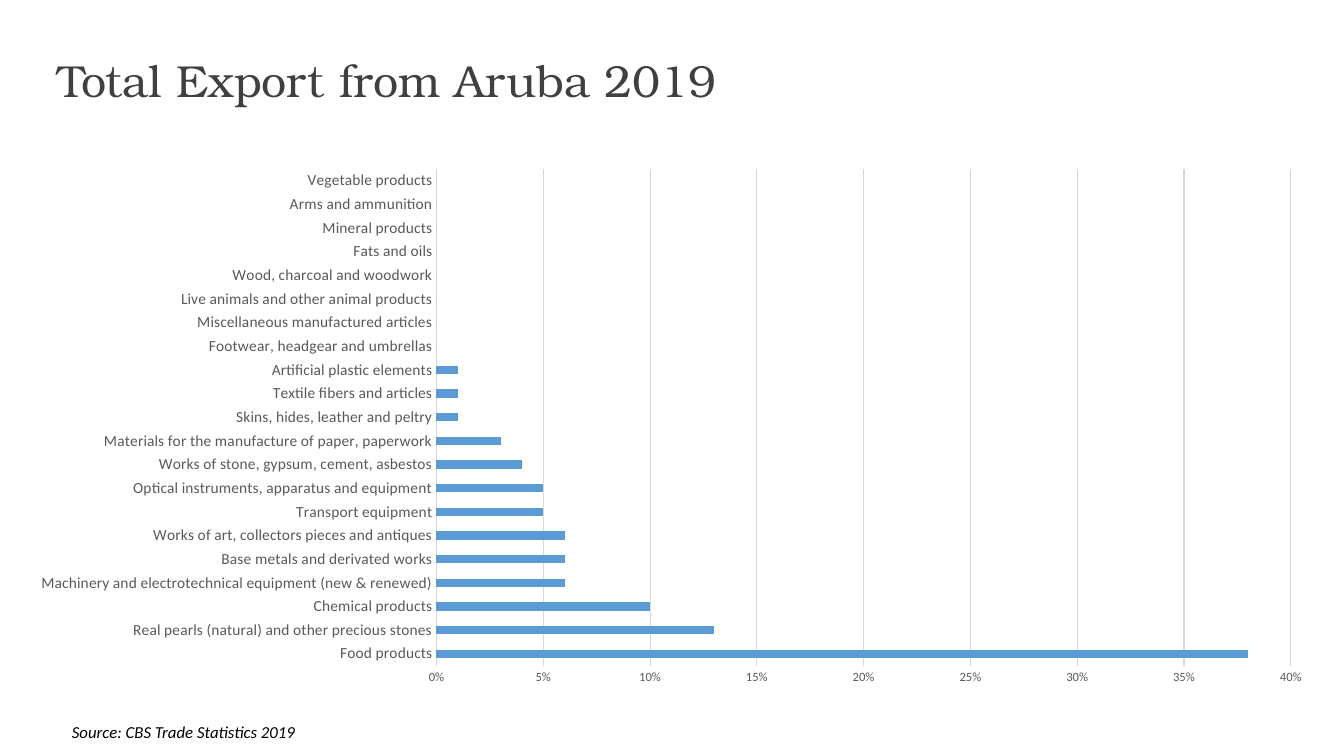
from pptx import Presentation
from pptx.chart.data import CategoryChartData as ChartData
from pptx.dml.color import RGBColor
from pptx.enum.chart import XL_CHART_TYPE as Chart, XL_TICK_MARK as Tick
from pptx.enum.text import MSO_ANCHOR as Anchor, MSO_AUTO_SIZE as Fit, PP_ALIGN as Align
from pptx.util import Pt

PX = 914400 / 100.8
BLACK = RGBColor(0x00, 0x00, 0x00)
DARK = RGBColor(0x40, 0x40, 0x40)
GRAY = RGBColor(0x59, 0x59, 0x59)
PALE = RGBColor(0xD9, 0xD9, 0xD9)
BLUE = RGBColor(0x5B, 0x9B, 0xD5)

EXPORTS = [
    ("Food products", 0.38),
    ("Real pearls (natural) and other precious stones", 0.13),
    ("Chemical products", 0.1),
    ("Machinery and electrotechnical equipment (new & renewed)", 0.06),
    ("Base metals and derivated works", 0.06),
    ("Works of art, collectors pieces and antiques", 0.06),
    ("Transport equipment", 0.05),
    ("Optical instruments, apparatus and equipment", 0.05),
    ("Works of stone, gypsum, cement, asbestos", 0.04),
    ("Materials for the manufacture of paper, paperwork", 0.03),
    ("Skins, hides, leather and peltry", 0.01),
    ("Textile fibers and articles", 0.01),
    ("Artificial plastic elements", 0.01),
    ("Footwear, headgear and umbrellas", 0),
    ("Miscellaneous manufactured articles", 0),
    ("Live animals and other animal products", 0),
    ("Wood, charcoal and woodwork", 0),
    ("Fats and oils", 0),
    ("Mineral products", 0),
    ("Arms and ammunition", 0),
    ("Vegetable products", 0),
]


def box(*sides):
    return [round(side * PX) for side in sides]


def style(font, name, size, color):
    font.name, font.size = name, Pt(size)
    font.color.rgb = color


deck = Presentation()
deck.slide_width, deck.slide_height = box(1344, 756)
slide = deck.slides.add_slide(deck.slide_layouts[5])

# Title
title = slide.shapes.title
title.left, title.top, title.width, title.height = box(47, 47, 836, 65)
frame = title.text_frame
frame.text = "Total Export from Aruba 2019"
frame.auto_size = Fit.NONE
frame.word_wrap = True
frame.vertical_anchor = Anchor.BOTTOM
para = frame.paragraphs[0]
para.alignment = Align.LEFT
para.line_spacing = 0.9
style(para.runs[0].font, "TeX Gyre Bonum", 32, DARK)

# Source line
frame = slide.shapes.add_textbox(*box(62, 717, 406, 30)).text_frame
frame.text = "Source: CBS Trade Statistics 2019"
frame.word_wrap = True
frame.auto_size = Fit.SHAPE_TO_FIT_TEXT
font = frame.paragraphs[0].runs[0].font
style(font, "Calibri", 12, BLACK)
font.italic = True

# Bar chart of export shares
data = ChartData(number_format="0%")
data.categories = [name for name, share in EXPORTS]
data.add_series("Series 1", [share for name, share in EXPORTS])
chart = slide.shapes.add_chart(
    Chart.BAR_CLUSTERED, *box(15, 158, 1313, 537), data).chart
chart.has_legend = False
chart.has_title = False
style(chart.font, "Calibri", 10, BLACK)

plot = chart.plots[0]
plot.gap_width = 182
plot.vary_by_categories = False
fill = plot.series[0].format.fill
fill.solid()
fill.fore_color.rgb = BLUE

# Axes
cats, vals = chart.category_axis, chart.value_axis
for axis, size in ((cats, 11), (vals, 9)):
    axis.major_tick_mark = axis.minor_tick_mark = Tick.NONE
    style(axis.tick_labels.font, "Calibri", size, GRAY)
vals.minimum_scale, vals.maximum_scale, vals.major_unit = 0, 0.4, 0.05
vals.tick_labels.number_format = "0%"
vals.tick_labels.number_format_is_linked = False
vals.has_major_gridlines = True
vals.format.line.fill.background()
for line in (cats.format.line, vals.major_gridlines.format.line):
    line.color.rgb = PALE
    line.width = Pt(0.75)

deck.save("out.pptx")
